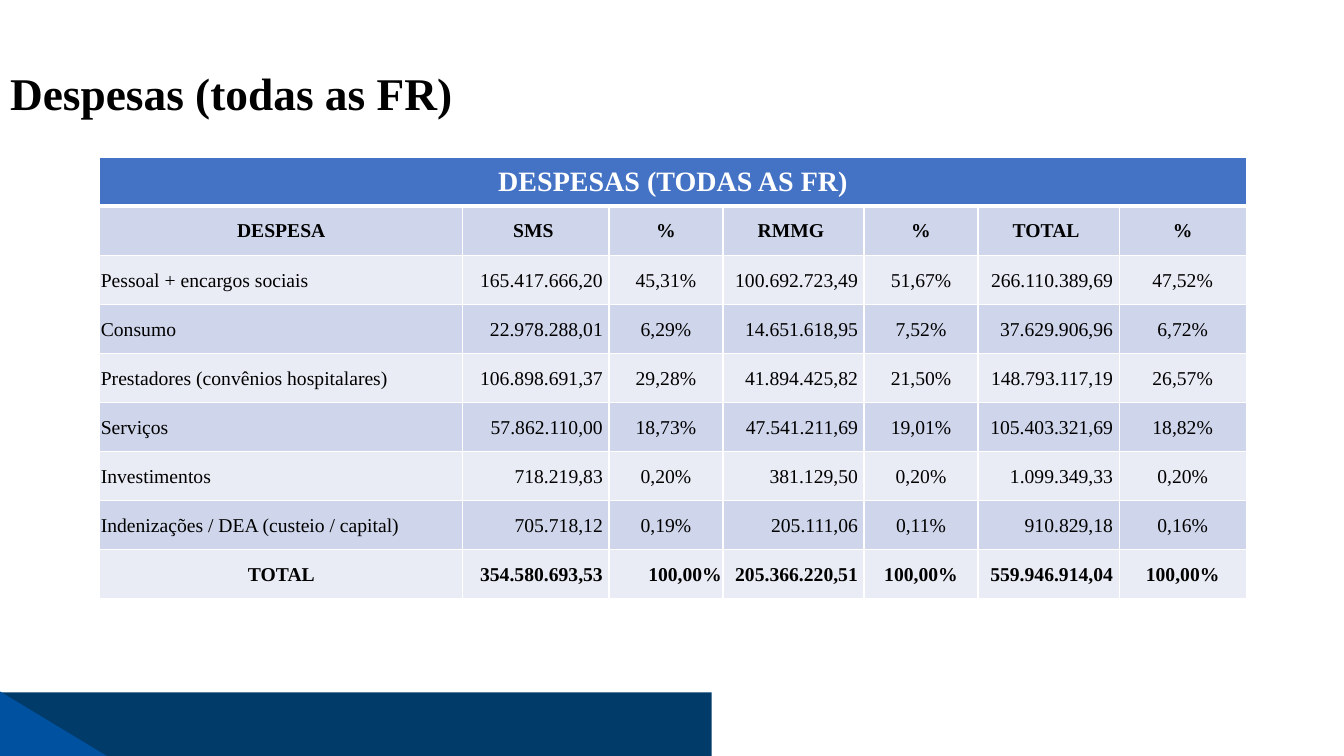
import pptx
import pptx.util
import pptx.dml.color
import pptx.enum.shapes
import pptx.enum.text
import pptx.oxml
import pptx.oxml.ns

Inches = pptx.util.Inches
RGBColor = pptx.dml.color.RGBColor
Alignment = pptx.enum.text.PP_ALIGN
Anchor = pptx.enum.text.MSO_ANCHOR
ShapeType = pptx.enum.shapes.MSO_SHAPE

BLACK = RGBColor(0x00, 0x00, 0x00)
WHITE = RGBColor(0xFF, 0xFF, 0xFF)
NAVY = RGBColor(0x00, 0x3B, 0x69)
BLUE = RGBColor(0x00, 0x51, 0x9F)
HEADER_BLUE = RGBColor(0x44, 0x72, 0xC4)
BAND_DARK = RGBColor(0xCF, 0xD5, 0xEA)
BAND_LIGHT = RGBColor(0xE9, 0xEB, 0xF5)

FONT = "Times New Roman"
COLUMN_WIDTHS = [3.6, 1.45, 1.13, 1.4, 1.13, 1.4, 1.26]
ROW_HEIGHT = 0.487
AMOUNT_COLUMNS = (1, 3, 5)
EXPENSES = [
    ["DESPESA", "SMS", "%", "RMMG", "%", "TOTAL", "%"],
    ["Pessoal + encargos sociais", "165.417.666,20", "45,31%",
     "100.692.723,49", "51,67%", "266.110.389,69", "47,52%"],
    ["Consumo", "22.978.288,01", "6,29%",
     "14.651.618,95", "7,52%", "37.629.906,96", "6,72%"],
    ["Prestadores (convênios hospitalares)", "106.898.691,37", "29,28%",
     "41.894.425,82", "21,50%", "148.793.117,19", "26,57%"],
    ["Serviços", "57.862.110,00", "18,73%",
     "47.541.211,69", "19,01%", "105.403.321,69", "18,82%"],
    ["Investimentos", "718.219,83", "0,20%",
     "381.129,50", "0,20%", "1.099.349,33", "0,20%"],
    ["Indenizações / DEA (custeio / capital)", "705.718,12", "0,19%",
     "205.111,06", "0,11%", "910.829,18", "0,16%"],
    ["TOTAL", "354.580.693,53", "100,00%",
     "205.366.220,51", "100,00%", "559.946.914,04", "100,00%"],
]


def write_text(text_frame, text, size=14, color=BLACK, bold=False,
               alignment=Alignment.LEFT, line_spacing=None):
    paragraph = text_frame.paragraphs[0]
    paragraph.alignment = alignment
    paragraph.line_spacing = line_spacing
    run = paragraph.add_run()
    run.text = text
    run.font.name = FONT
    run.font.size = pptx.util.Pt(size)
    run.font.bold = bold
    run.font.color.rgb = color


def add_title(slide, text):
    title = slide.shapes.title
    title.left, title.top = Inches(0), Inches(0.7)
    title.width, title.height = Inches(11), Inches(0.51)
    title.text_frame.auto_size = pptx.enum.text.MSO_AUTO_SIZE.NONE
    title.text_frame.vertical_anchor = Anchor.MIDDLE
    write_text(title.text_frame, text, size=32.4, bold=True, line_spacing=0.9)


def add_footer_shape(slide, shape_type, top, width, color):
    shape = slide.shapes.add_shape(
        shape_type, Inches(0), Inches(top), Inches(width), Inches(0.64))
    shape.shadow.inherit = False
    shape.fill.solid()
    shape.fill.fore_color.rgb = color
    shape.line.fill.background()


def set_borders(cell, bottom_width):
    properties = cell._tc.get_or_add_tcPr()
    widths = {"lnL": 1, "lnR": 1, "lnT": 1, "lnB": bottom_width}
    for position, (tag, width) in enumerate(widths.items()):
        properties.insert(position, pptx.oxml.parse_xml(
            f'<a:{tag} {pptx.oxml.ns.nsdecls("a")} w="{pptx.util.Pt(width)}">'
            f'<a:solidFill><a:srgbClr val="{WHITE}"/></a:solidFill></a:{tag}>'))


def format_cell(cell, fill, margin_right=0.01, bottom_width=1):
    cell.fill.solid()
    cell.fill.fore_color.rgb = fill
    cell.vertical_anchor = Anchor.MIDDLE
    cell.margin_left = cell.margin_top = Inches(0.01)
    cell.margin_right = Inches(margin_right)
    cell.margin_bottom = Inches(0)
    set_borders(cell, bottom_width)


def cell_alignment(row, column):
    last = len(EXPENSES) - 1
    if row == 0:
        return Alignment.CENTER
    if column in AMOUNT_COLUMNS or (row, column) == (last, 2):
        return Alignment.RIGHT
    if column == 0 and row < last:
        return Alignment.LEFT
    return Alignment.CENTER


def add_expense_table(slide, heading):
    row_count = len(EXPENSES) + 1
    frame = slide.shapes.add_table(
        row_count, len(COLUMN_WIDTHS), Inches(0.99), Inches(1.56),
        Inches(sum(COLUMN_WIDTHS)), Inches(ROW_HEIGHT * row_count))
    table = frame.table
    table.first_row = table.horz_banding = False
    for column, width in zip(table.columns, COLUMN_WIDTHS):
        column.width = Inches(width)
    for row in table.rows:
        row.height = Inches(ROW_HEIGHT)

    for cell in table.rows[0].cells:
        format_cell(cell, HEADER_BLUE, bottom_width=3)
    heading_cell = table.cell(0, 0)
    heading_cell.merge(table.cell(0, len(COLUMN_WIDTHS) - 1))
    write_text(heading_cell.text_frame, heading, size=20, color=WHITE,
               bold=True, alignment=Alignment.CENTER)

    for row, values in enumerate(EXPENSES):
        fill = BAND_LIGHT if row % 2 else BAND_DARK
        bold = row in (0, len(EXPENSES) - 1)
        for column, value in enumerate(values):
            cell = table.cell(row + 1, column)
            margin_right = 0.06 if column in AMOUNT_COLUMNS else 0.01
            format_cell(cell, fill, margin_right,
                        bottom_width=1)
            write_text(cell.text_frame, value, bold=bold,
                       alignment=cell_alignment(row, column))


def main():
    presentation = pptx.Presentation()
    presentation.slide_width = Inches(13.33)
    presentation.slide_height = Inches(7.5)
    slide = presentation.slides.add_slide(presentation.slide_layouts[5])
    add_footer_shape(slide, ShapeType.RECTANGLE, 6.87, 7.06, NAVY)
    add_footer_shape(slide, ShapeType.RIGHT_TRIANGLE, 6.86, 1.06, BLUE)
    add_title(slide, "Despesas (todas as FR)")
    add_expense_table(slide, "DESPESAS (TODAS AS FR)")
    presentation.save("out.pptx")


if __name__ == "__main__":
    main()
